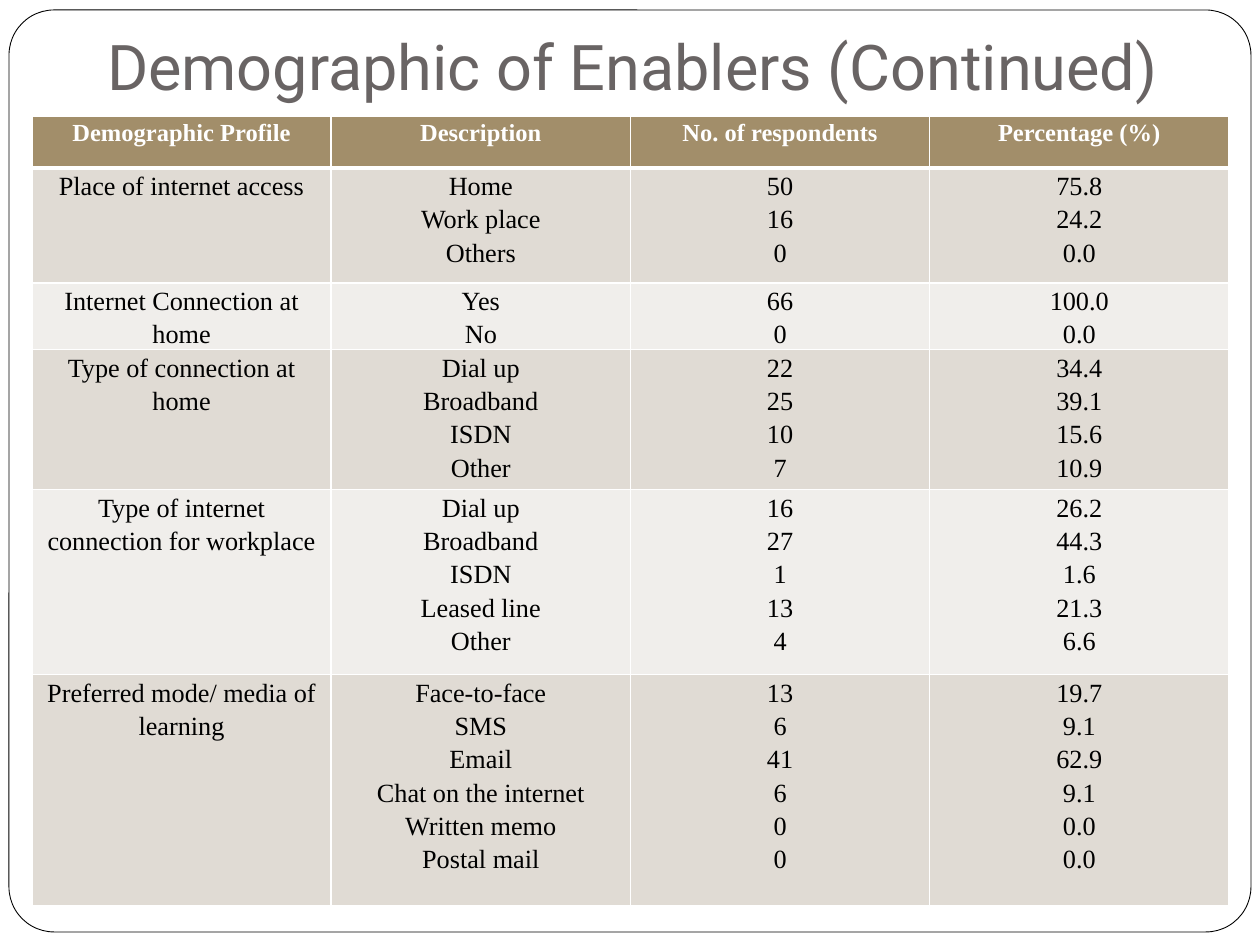
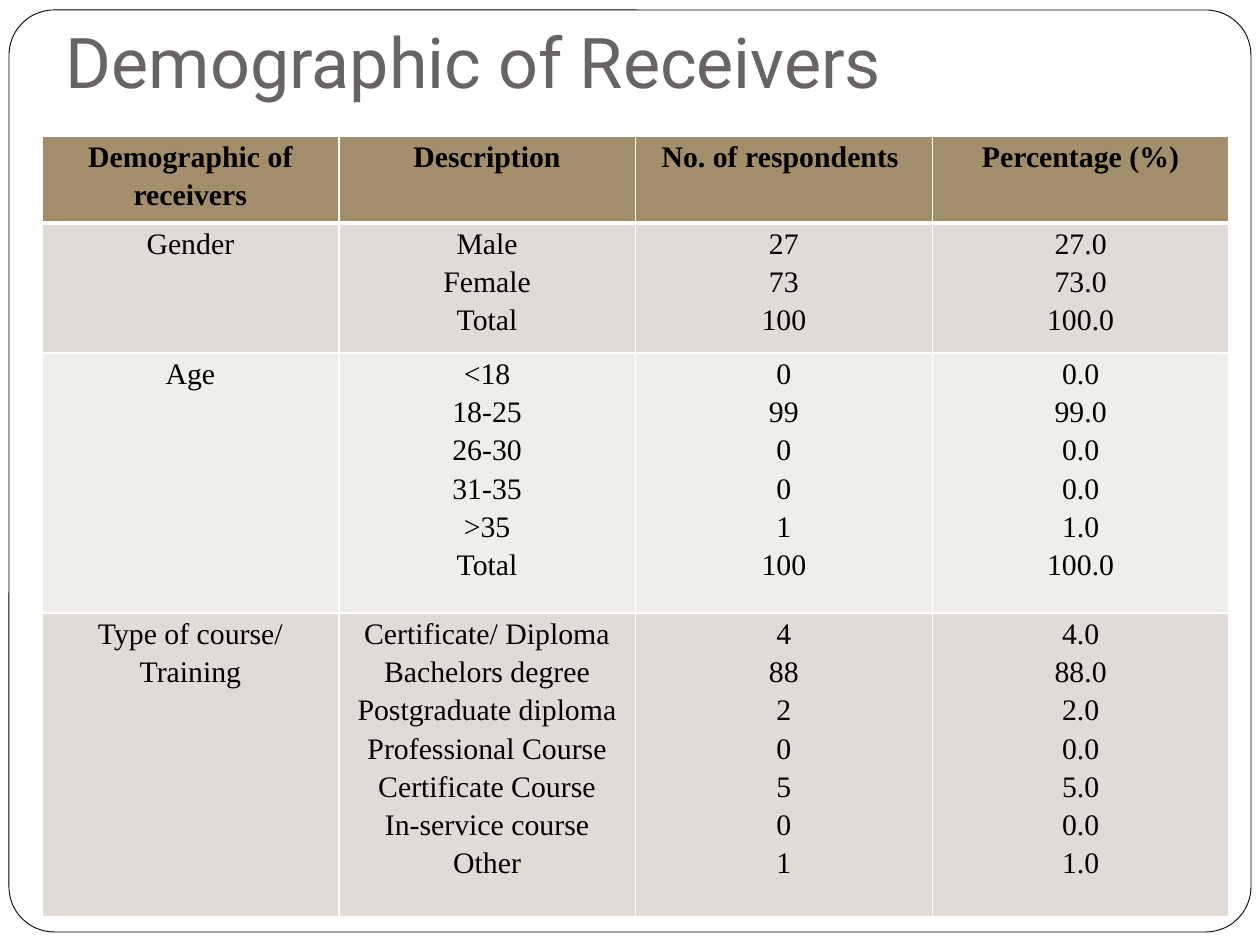
from dataclasses import dataclass

from lxml.etree import SubElement
from pptx import Presentation
from pptx.dml.color import RGBColor as RGB
from pptx.enum.shapes import MSO_SHAPE as SHAPE
from pptx.enum.text import MSO_ANCHOR as ANCHOR, MSO_AUTO_SIZE as AUTO, PP_ALIGN as ALIGN
from pptx.oxml.ns import qn
from pptx.util import Emu, Pt

SCALE = 914400 / 126  # EMU in one px


@dataclass(frozen=True)
class Theme:
    white: str = "FFFFFF"
    black: str = "000000"
    title: str = "696464"
    header: str = "A28E6A"
    bands: tuple = ("E0DBD4", "F0EEEB")
    title_font: str = "Roboto"
    table_font: str = "Times New Roman"
    line_spacing: float = 1.15
    rule: float = 1
    header_rule: float = 3
    frame_rule: float = 0.5


THEME = Theme()

ENABLERS = {
    "title": "Demographic of Enablers (Continued)",
    "title_box": (94, -42, 1103, 158),
    "title_size": 36,
    "table_box": (32, 116, 1197),
    "row_heights": (52, 115, 64, 140, 185, 231),
    "header_size": 14,
    "header_color": THEME.white,
    "body_size": 15,
    "headings": ("Demographic Profile", "Description", "No. of respondents", "Percentage (%)"),
    "groups": {
        "Place of internet access": [
            ("Home", "50", "75.8"), ("Work place", "16", "24.2"), ("Others", "0", "0.0")],
        "Internet Connection at home": [("Yes", "66", "100.0"), ("No", "0", "0.0")],
        "Type of connection at home": [
            ("Dial up", "22", "34.4"), ("Broadband", "25", "39.1"),
            ("ISDN", "10", "15.6"), ("Other", "7", "10.9")],
        "Type of internet connection for workplace": [
            ("Dial up", "16", "26.2"), ("Broadband", "27", "44.3"), ("ISDN", "1", "1.6"),
            ("Leased line", "13", "21.3"), ("Other", "4", "6.6")],
        "Preferred mode/ media of learning": [
            ("Face-to-face", "13", "19.7"), ("SMS", "6", "9.1"), ("Email", "41", "62.9"),
            ("Chat on the internet", "6", "9.1"), ("Written memo", "0", "0.0"),
            ("Postal mail", "0", "0.0")],
    },
}

RECEIVERS = {
    "title": "Demographic of Receivers",
    "title_box": (53, -42, 1071, 158),
    "title_size": 40,
    "table_box": (42, 136, 1187),
    "row_heights": (87, 130, 260, 304),
    "header_size": 17,
    "header_color": THEME.black,
    "body_size": 17,
    "headings": ("Demographic of receivers", "Description", "No. of respondents ",
                 "Percentage (%)"),
    "groups": {
        "Gender": [("Male", "27", "27.0"), ("Female", "73", "73.0"), ("Total", "100", "100.0")],
        "Age": [
            ("<18", "0", "0.0"), ("18-25", "99", "99.0"), ("26-30", "0", "0.0"),
            ("31-35", "0", "0.0"), (">35", "1", "1.0"), ("Total", "100", "100.0")],
        "Type of course/ Training": [
            ("Certificate/ Diploma", "4", "4.0"), ("Bachelors degree", "88", "88.0"),
            ("Postgraduate diploma", "2", "2.0"), ("Professional Course", "0", "0.0"),
            ("Certificate Course", "5", "5.0"), ("In-service course", "0", "0.0"),
            ("Other", "1", "1.0")],
    },
}


def px(n):
    return Emu(round(n * SCALE))


def apply(obj, values):
    for name, value in values.items():
        setattr(obj, name, value)


def style_text(tf, font, size, color, bold, align, spacing=None):
    for p in tf.paragraphs:
        apply(p, {"alignment": align, "line_spacing": spacing})
        for r in p.runs:
            apply(r.font, {"name": font, "size": Pt(size), "bold": bold})
            r.font.color.rgb = RGB.from_string(color)


def add_frame(slide, box):
    """Draw the rounded page frame and move it to the layout, behind everything."""
    sp = slide.shapes.add_shape(SHAPE.ROUNDED_RECTANGLE, *map(px, box))
    sp.adjustments[0] = 0.049
    sp.shadow.inherit = False
    sp.fill.solid()
    sp.fill.fore_color.rgb = RGB.from_string(THEME.white)
    sp.line.color.rgb = RGB.from_string(THEME.black)
    sp.line.width = Pt(THEME.frame_rule)
    slide.slide_layout.shapes.element.insert(2, sp.element)


def add_title(slide, text, box, size):
    sp = slide.shapes.title
    apply(sp, dict(zip(("left", "top", "width", "height"), map(px, box))))
    tf = sp.text_frame
    tf.text = text
    apply(tf, {"word_wrap": True, "auto_size": AUTO.NONE, "vertical_anchor": ANCHOR.BOTTOM,
               "margin_left": px(13), "margin_right": px(13),
               "margin_top": px(6), "margin_bottom": px(13)})
    style_text(tf, THEME.title_font, size, THEME.title, False, ALIGN.LEFT)


def set_borders(cell, **widths):
    tcPr = cell._tc.get_or_add_tcPr()
    for side in "LRTB":
        ln = SubElement(tcPr, qn(f"a:ln{side}"), w=str(Pt(widths.get(side, THEME.rule))))
        fill = SubElement(ln, qn("a:solidFill"))
        SubElement(fill, qn("a:srgbClr"), val=THEME.white)


def fill_cell(cell, text, row, data):
    header = row == 0
    apply(cell, {"margin_left": px(9), "margin_right": px(9),
                 "margin_top": 0, "margin_bottom": 0})
    heavy = {0: {"B": THEME.header_rule}, 1: {"T": THEME.header_rule}}
    set_borders(cell, **heavy.get(row, {}))
    cell.fill.solid()
    color = THEME.header if header else THEME.bands[(row - 1) % 2]
    cell.fill.fore_color.rgb = RGB.from_string(color)
    cell.text_frame.text = text
    style_text(cell.text_frame, THEME.table_font,
               data["header_size"] if header else data["body_size"],
               data["header_color"] if header else THEME.black,
               header, ALIGN.CENTER, THEME.line_spacing)


def add_profile_table(slide, data):
    """One row per profile; its answers are stacked as paragraphs in each cell."""
    rows = [data["headings"]]
    for profile, answers in data["groups"].items():
        rows.append((profile, *map("\n".join, zip(*answers))))
    heights = data["row_heights"]
    left, top, width = data["table_box"]
    table = slide.shapes.add_table(len(rows), len(rows[0]), px(left), px(top),
                                   px(width), px(sum(heights))).table
    for row, height in zip(table.rows, heights):
        row.height = px(height)
    for i, texts in enumerate(rows):
        for j, text in enumerate(texts):
            fill_cell(table.cell(i, j), text, i, data)


def add_profile_slide(prs, layout, data):
    slide = prs.slides.add_slide(layout)
    add_title(slide, data["title"], data["title_box"], data["title_size"])
    add_profile_table(slide, data)
    return slide


def main():
    prs = Presentation()
    apply(prs, {"slide_width": px(1260), "slide_height": px(945)})
    title_only = prs.slide_layouts[5]
    slides = [add_profile_slide(prs, title_only, data) for data in (ENABLERS, RECEIVERS)]
    add_frame(slides[0], (9, 10, 1242, 922))
    prs.save("out.pptx")


if __name__ == "__main__":
    main()
